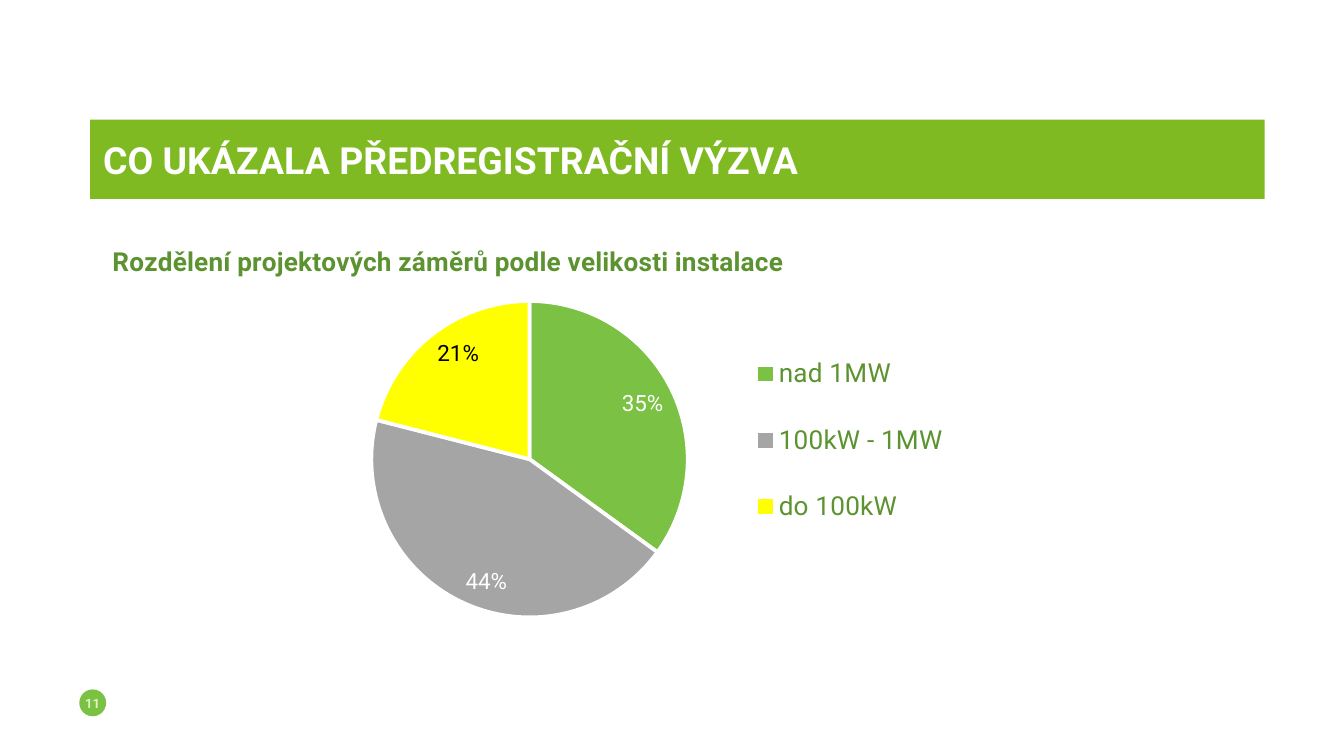
"""Build the slide on the split of planned projects by installation size."""
import pptx
import pptx.chart.data
import pptx.dml.color
import pptx.enum.chart
import pptx.enum.shapes
import pptx.enum.text
import pptx.oxml
import pptx.oxml.ns
import pptx.util

Pt = pptx.util.Pt
FONT = "Roboto"
WHITE, GREEN, DARK = "FFFFFF", "7BC143", "5C9330"
HEAD = "CO UKÁZALA PŘEDREGISTRAČNÍ VÝZVA"
TITLE = "Rozdělení projektových záměrů podle velikosti instalace"
PAGE = "11"
PARTS = [
    ("nad 1MW", 0.35, GREEN, WHITE),
    ("100kW - 1MW", 0.44, "A5A5A5", WHITE),
    ("do 100kW", 0.21, "FFFF00", "000000"),
]
SHAPES = pptx.enum.shapes.MSO_SHAPE
ALIGN = pptx.enum.text.PP_ALIGN
BANNER = (48.24, 64.08, 629.28, 42.48)
BADGE = (42.48, 369.36, 14.4, 14.4)
CHART = (48.24, 117.36, 470.88, 254.88)


def color(code):
    return pptx.dml.color.RGBColor.from_string(code)


def style(font, size, code, bold=False):
    font.name, font.size, font.bold = FONT, Pt(size), bold
    font.color.rgb = color(code)


def add_box(slide, kind, box, fill, text, size, code, align, inset=0):
    shape = slide.shapes.add_shape(kind, *map(Pt, box))
    shape.shadow.inherit = False
    shape.fill.solid()
    shape.fill.fore_color.rgb = color(fill)
    shape.line.fill.background()
    frame = shape.text_frame
    frame.word_wrap = False
    frame.margin_left = Pt(inset)
    frame.margin_right = frame.margin_top = frame.margin_bottom = 0
    frame.vertical_anchor = pptx.enum.text.MSO_ANCHOR.MIDDLE
    para = frame.paragraphs[0]
    para.text, para.alignment = text, align
    style(para.font, size, code, True)


def place(node, inner=False, **spots):
    qn = pptx.oxml.ns.qn
    for old in node.findall(qn("c:layout")):
        node.remove(old)
    rows = '<c:layoutTarget val="inner"/>' if inner else ""
    rows += "".join(f'<c:{k}Mode val="edge"/>' for k in "xy")
    rows += "".join(f'<c:{k} val="{v}"/>' for k, v in spots.items())
    layout = pptx.oxml.parse_xml(
        f'<c:layout {pptx.oxml.ns.nsdecls("c")}>'
        f"<c:manualLayout>{rows}</c:manualLayout></c:layout>")
    over = node.find(qn("c:overlay"))
    node.insert(0 if over is None else node.index(over), layout)


def add_pie(slide):
    enum = pptx.enum.chart
    data = pptx.chart.data.CategoryChartData(number_format="0%")
    data.categories = [part[0] for part in PARTS]
    data.add_series("Series 1", [part[1] for part in PARTS])
    chart = slide.shapes.add_chart(
        enum.XL_CHART_TYPE.PIE, *map(Pt, CHART), data).chart
    style(chart.font, 10, GREEN)

    chart.has_title = True
    para = chart.chart_title.text_frame.paragraphs[0]
    para.text = TITLE
    style(para.font, 14, DARK, True)
    place(chart.chart_title._element, x=0.02, y=0.04)

    chart.has_legend = True
    legend = chart.legend
    legend.position = enum.XL_LEGEND_POSITION.RIGHT
    legend.include_in_layout = False
    style(legend.font, 14, DARK)
    place(legend._element, x=0.74, y=0.22, w=0.25, h=0.49)

    plot = chart.plots[0]
    plot.vary_by_categories = True
    place(plot._element.getparent(), True, x=0.32, y=0.17, w=0.36, h=0.67)
    series = plot.series[0]
    spot = enum.XL_LABEL_POSITION.INSIDE_END
    labels = series.data_labels
    labels.show_value = True
    labels.number_format, labels.number_format_is_linked = "0%", False
    labels.position = spot
    style(labels.font, 12, WHITE)
    for i, (_, _, fill, ink) in enumerate(PARTS):
        point = series.points[i]
        point.format.fill.solid()
        point.format.fill.fore_color.rgb = color(fill)
        point.format.line.color.rgb = color(WHITE)
        point.format.line.width = Pt(2)
        if ink != WHITE:
            style(point.data_label.font, 12, ink)
            point.data_label.position = spot


def main():
    deck = pptx.Presentation()
    deck.slide_width, deck.slide_height = Pt(720), Pt(405)
    slide = deck.slides.add_slide(deck.slide_layouts[6])
    add_box(slide, SHAPES.OVAL, BADGE, GREEN, PAGE, 7, "DFF5C0", ALIGN.CENTER)
    add_box(slide, SHAPES.RECTANGLE, BANNER, "7FBA22", HEAD, 20, WHITE,
            ALIGN.LEFT, 7)
    add_pie(slide)
    deck.save("out.pptx")


if __name__ == "__main__":
    main()
